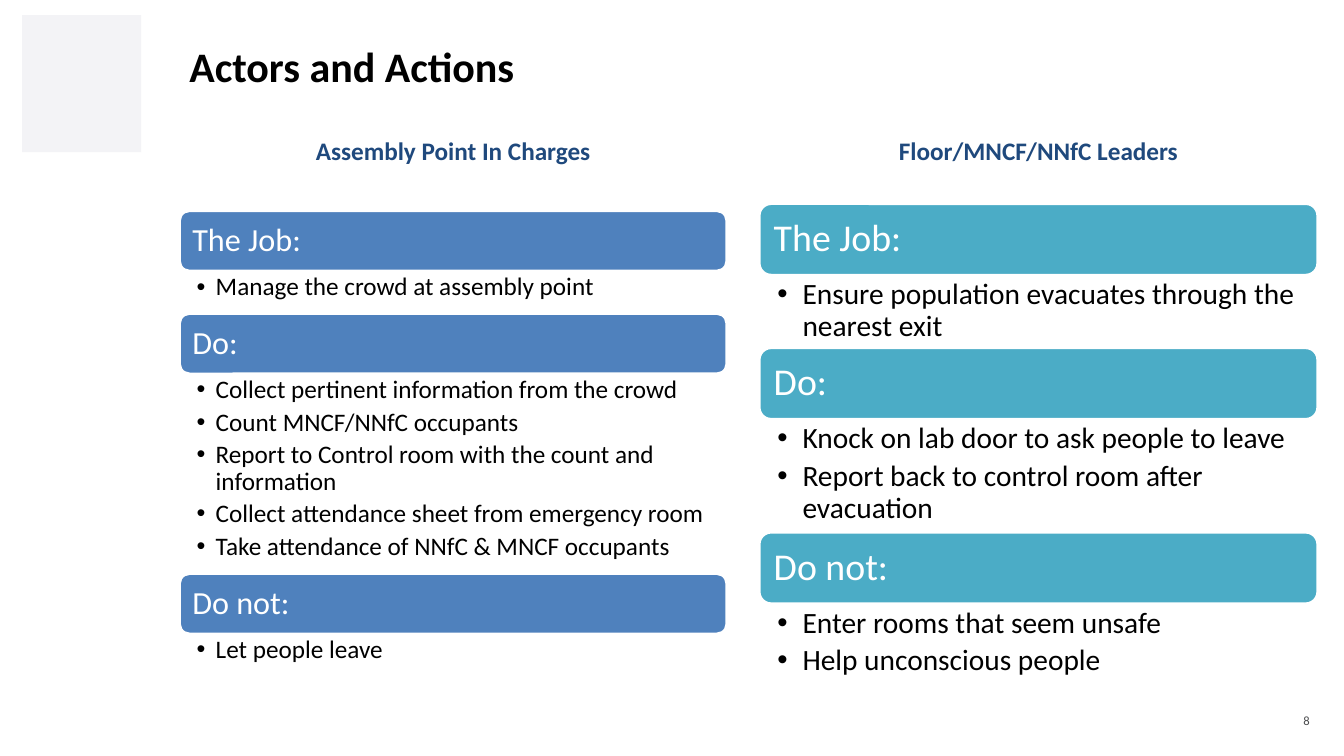
from lxml.etree import SubElement
from pptx import Presentation
from pptx.dml.color import RGBColor
from pptx.enum.shapes import MSO_SHAPE as Shape
from pptx.enum.text import MSO_ANCHOR as Anchor, PP_ALIGN as Align
from pptx.oxml.ns import qn
from pptx.util import Inches, Pt

COLORS = {"black": "000000", "white": "FFFFFF", "navy": "1F497D", "blue": "4F81BD",
          "teal": "4BACC6", "pale": "F3F3F6", "grey": "4C4D4F"}

# Content: each section is (heading, list height, actions)
TITLE = "Actors and Actions"
PAGE_NUMBER = "8"
ACTORS = [
    {"name": "Assembly Point In Charges", "color": "blue",
     "left": 1.78, "top": 2.09, "width": 5.43, "bar_height": 0.6,
     "bar_size": 23, "bar_inset": 0.1, "action_size": 18, "indent": 0.19,
     "list_insets": (0.17, 0.03, 0.18, 0.03),
     "sections": [
         ("The Job:", 0.42, ["Manage the crowd at assembly point"]),
         ("Do:", 1.98, ["Collect pertinent information from the crowd",
                        "Count MNCF/NNfC occupants",
                        "Report to Control room with the count and information",
                        "Collect attendance sheet from emergency room",
                        "Take attendance of NNfC & MNCF occupants"]),
         ("Do not:", 0.42, ["Let people leave"])]},
    {"name": "Floor/MNCF/NNfC Leaders", "color": "teal",
     "left": 7.53, "top": 2.02, "width": 5.54, "bar_height": 0.71,
     "bar_size": 27, "bar_inset": 0.11, "action_size": 21, "indent": 0.25,
     "list_insets": (0.18, 0.04, 0.21, 0.04),
     "sections": [
         ("The Job:", 0.72, ["Ensure population evacuates through the nearest exit"]),
         ("Do:", 1.12, ["Knock on lab door to ask people to leave",
                        "Report back to control room after evacuation"]),
         ("Do not:", 0.79, ["Enter rooms that seem unsafe",
                            "Help unconscious people"])]},
]


def rgb(name):
    return RGBColor.from_string(COLORS[name])


def add_panel(slide, kind, box, fill):
    panel = slide.shapes.add_shape(kind, *map(Inches, box))
    panel.shadow.inherit = False
    panel.fill.solid()
    panel.fill.fore_color.rgb = rgb(fill)
    panel.line.fill.background()
    return panel


def add_bullet(paragraph, indent):
    props = paragraph._p.get_or_add_pPr()
    props.set("marL", str(Inches(indent)))
    props.set("indent", str(-Inches(indent)))
    SubElement(props, qn("a:buFont"), typeface="Arial")
    SubElement(props, qn("a:buChar"), char="•")


def write(holder, lines, size, color, insets=(0.1, 0.05, 0.1, 0.05),
          anchor=Anchor.TOP, align=Align.LEFT, bold=False, indent=0, spacing=None):
    frame = holder.text_frame
    sides = ("margin_left", "margin_top", "margin_right", "margin_bottom")
    frame_format = {"word_wrap": True, "vertical_anchor": anchor,
                    **dict(zip(sides, map(Inches, insets)))}
    for key, value in frame_format.items():
        setattr(frame, key, value)
    for number, line in enumerate(lines):
        paragraph = frame.add_paragraph() if number else frame.paragraphs[0]
        paragraph.text = line
        paragraph.alignment = align
        if spacing:
            paragraph.line_spacing = spacing
        if indent:
            paragraph.space_after = Pt(0.2 * size)
            add_bullet(paragraph, indent)
        font = paragraph.runs[0].font
        for key, value in {"name": "Calibri", "size": Pt(size), "bold": bold}.items():
            setattr(font, key, value)
        font.color.rgb = rgb(color)


def add_text(slide, box, lines, size, color, **layout):
    write(slide.shapes.add_textbox(*map(Inches, box)), lines, size, color, **layout)


def add_actor(slide, actor):
    left, top, width = actor["left"], actor["top"], actor["width"]
    add_text(slide, (left, 1.29, width, 0.7), [actor["name"]], 18, "navy",
             align=Align.CENTER, bold=True)
    # Heading bars and action lists stack downwards
    for heading, list_height, actions in actor["sections"]:
        bar = add_panel(slide, Shape.ROUNDED_RECTANGLE,
                        (left, top, width, actor["bar_height"]), actor["color"])
        bar.line.color.rgb = rgb("white")
        bar.line.width = Pt(2)
        write(bar, [heading], actor["bar_size"], "white",
              insets=[actor["bar_inset"]] * 4, anchor=Anchor.MIDDLE, spacing=0.9)
        top += actor["bar_height"]
        add_text(slide, (left, top, width, list_height), actions,
                 actor["action_size"], "black", insets=actor["list_insets"],
                 indent=actor["indent"], spacing=0.9)
        top += list_height


def main():
    deck = Presentation()
    deck.slide_width, deck.slide_height = Inches(13.33), Inches(7.5)
    slide = deck.slides.add_slide(deck.slide_layouts[6])
    # Corner block, title and page number
    add_panel(slide, Shape.RECTANGLE, (0.22, 0.15, 1.18, 1.36), "pale")
    add_text(slide, (1.78, 0.15, 11.3, 1.01), [TITLE], 30, "black",
             anchor=Anchor.MIDDLE, bold=True)
    add_text(slide, (11.63, 6.95, 1.46, 0.4), [PAGE_NUMBER], 9, "grey",
             anchor=Anchor.MIDDLE, align=Align.RIGHT)
    # One column per actor
    for actor in ACTORS:
        add_actor(slide, actor)
    deck.save("out.pptx")


if __name__ == "__main__":
    main()
